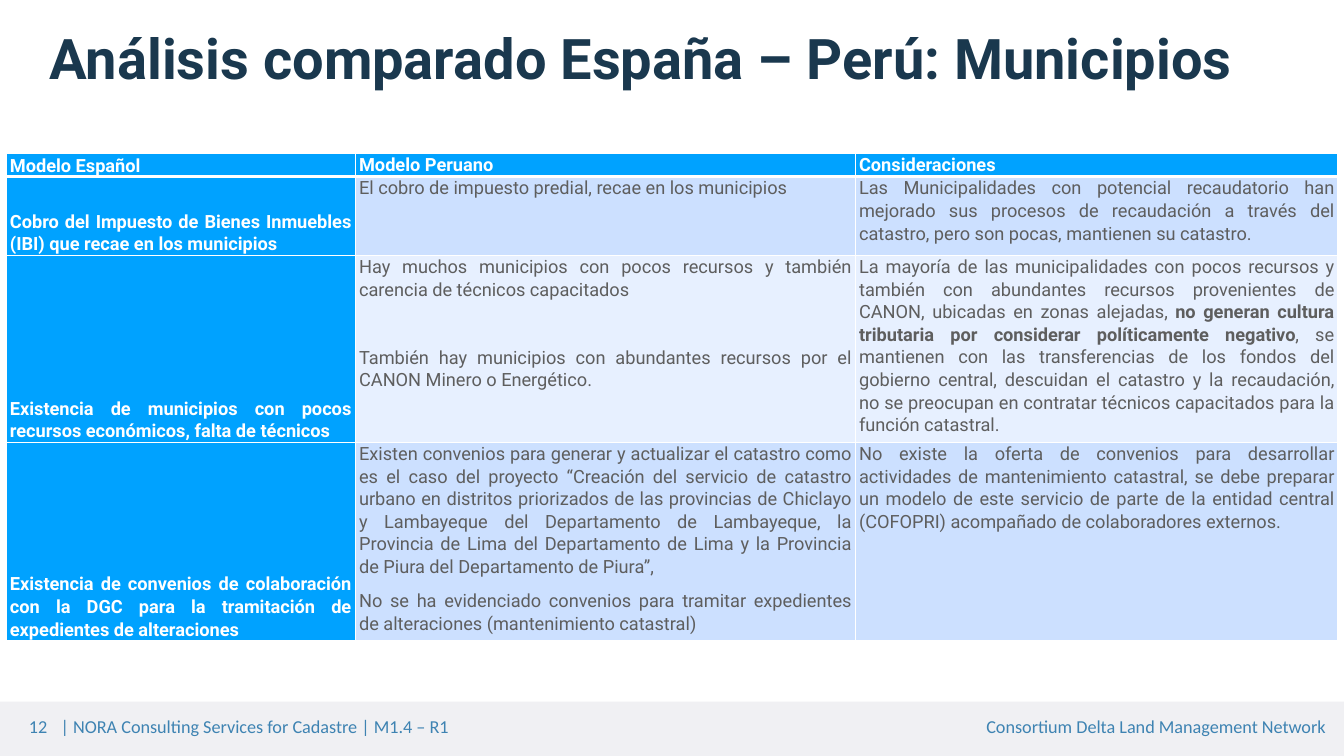
import pptx
import pptx.dml.color
import pptx.enum.shapes
import pptx.enum.text
import pptx.oxml
import pptx.oxml.ns
import pptx.util

Cm = pptx.util.Cm
Pt = pptx.util.Pt
Align = pptx.enum.text.PP_ALIGN
Anchor = pptx.enum.text.MSO_ANCHOR

COLORS = {
    "title": "1A384E",
    "footer band": "F0F0F3",
    "footer text": "3E83B2",
    "header": "00A2FF",
    "odd row": "CCE0FF",
    "even row": "E7F0FF",
    "body text": "5E5E5E",
    "white": "FFFFFF",
}

PAGE_WIDTH, PAGE_HEIGHT = 33.87, 19.05
COLUMN_WIDTHS = [8.8, 12.6, 12.17]
ROW_HEIGHTS = [0.43, 1.98, 4.42, 4.65]
BLANK_LINE = Pt(24.5)

# Each cell is a list of paragraphs; ** switches bold on and off.
MUNICIPALITY_ROWS = [
    [["Modelo Español"], ["Modelo Peruano"], ["Consideraciones"]],
    [
        ["Cobro del Impuesto de Bienes Inmuebles (IBI) que recae en los municipios"],
        ["El cobro de impuesto predial, recae en los municipios"],
        ["Las Municipalidades con potencial recaudatorio han mejorado sus procesos de "
         "recaudación a través del catastro, pero son pocas, mantienen su catastro."],
    ],
    [
        ["Existencia de municipios con pocos recursos económicos, falta de técnicos"],
        ["Hay muchos municipios con pocos recursos y también carencia de técnicos capacitados",
         "También hay municipios con abundantes recursos por el CANON Minero o Energético."],
        ["La mayoría de las municipalidades con pocos recursos y también con abundantes "
         "recursos provenientes de CANON, ubicadas en zonas alejadas, **no generan cultura "
         "tributaria por considerar políticamente negativo**, se mantienen con las "
         "transferencias de los fondos del gobierno central, descuidan el catastro y la "
         "recaudación, no se preocupan en contratar técnicos capacitados para la función "
         "catastral."],
    ],
    [
        ["Existencia de convenios de colaboración con la DGC para la tramitación de "
         "expedientes de alteraciones"],
        ["Existen convenios para generar y actualizar el catastro como es el caso del proyecto "
         "“Creación del servicio de catastro urbano en distritos priorizados de las provincias "
         "de Chiclayo y Lambayeque del Departamento de Lambayeque, la Provincia de Lima del "
         "Departamento de Lima y la Provincia de Piura del Departamento de Piura”,",
         "No se ha evidenciado convenios para tramitar expedientes de alteraciones "
         "(mantenimiento catastral)"],
        ["No existe la oferta de convenios para desarrollar actividades de mantenimiento "
         "catastral, se debe preparar un modelo de este servicio de parte de la entidad "
         "central (COFOPRI) acompañado de colaboradores externos."],
    ],
]


def rgb(name):
    return pptx.dml.color.RGBColor.from_string(COLORS[name])


def style_span(span, font, size, color, bold=False):
    span.font.name = font
    span.font.size = Pt(size)
    span.font.bold = bold
    span.font.color.rgb = rgb(color)


def set_margins(frame, margin):
    frame.margin_left = frame.margin_right = margin
    frame.margin_top = frame.margin_bottom = margin


def add_title(page, left, top, width, height):
    title = page.shapes.title
    title.left, title.top, title.width, title.height = Cm(left), Cm(top), Cm(width), Cm(height)
    frame = title.text_frame
    frame.text = "Análisis comparado España – Perú: Municipios"
    frame.auto_size = pptx.enum.text.MSO_AUTO_SIZE.NONE
    frame.vertical_anchor = Anchor.MIDDLE
    set_margins(frame, Cm(0.08))
    para = frame.paragraphs[0]
    para.alignment = Align.LEFT
    style_span(para.runs[0], "Roboto", 40, "title", True)


def add_footer(page, left, top, width, height):
    band = page.shapes.add_shape(pptx.enum.shapes.MSO_SHAPE.RECTANGLE,
                                 Cm(left), Cm(top), Cm(width), Cm(height))
    band.shadow.inherit = False
    band.fill.solid()
    band.fill.fore_color.rgb = rgb("footer band")
    band.line.fill.background()

    labels = [
        ("12", 0.25, 1.42, Align.CENTER),
        ("| NORA Consulting Services for Cadastre | M1.4 – R1", 1.45, 15.14, Align.LEFT),
        ("Consortium Delta Land Management Network", 18.34, 15.14, Align.RIGHT),
    ]
    for text, offset, label_width, alignment in labels:
        box = page.shapes.add_textbox(Cm(left + offset), Cm(top + 0.28),
                                      Cm(label_width), Cm(0.69))
        frame = box.text_frame
        frame.text = text
        frame.word_wrap = True
        frame.vertical_anchor = Anchor.MIDDLE
        set_margins(frame, Cm(0.08))
        para = frame.paragraphs[0]
        para.alignment = alignment
        style_span(para.runs[0], "Calibri", 13, "footer text")


def set_borders(cell, row):
    """Draw white cell borders, thick between the header and the first row."""
    widths = {"L": 1, "R": 1, "T": 3 if row == 1 else 1, "B": 3 if row == 0 else 1}
    properties = cell._tc.get_or_add_tcPr()
    for position, (side, width) in enumerate(widths.items()):
        properties.insert(position, pptx.oxml.parse_xml(
            f'<a:ln{side} {pptx.oxml.ns.nsdecls("a")} w="{Pt(width)}">'
            f'<a:solidFill><a:srgbClr val="{COLORS["white"]}"/></a:solidFill></a:ln{side}>'))


def fill_cell(cell, texts, row, column):
    is_heading = row == 0 or column == 0
    cell.fill.solid()
    cell.fill.fore_color.rgb = rgb(
        "header" if is_heading else "odd row" if row % 2 else "even row")
    cell.margin_left = cell.margin_right = Cm(0.1)
    cell.margin_top = cell.margin_bottom = 0
    cell.vertical_anchor = Anchor.BOTTOM if column == 0 else Anchor.TOP
    set_borders(cell, row)

    frame = cell.text_frame
    for index, text in enumerate(texts):
        para = frame.add_paragraph() if index else frame.paragraphs[0]
        para.alignment = Align.JUSTIFY
        para.line_spacing = 1.07
        para.space_after = Pt(8)
        if index and row == 2:
            para.space_before = BLANK_LINE
        for part, piece in enumerate(text.split("**")):
            span = para.add_run()
            span.text = piece
            style_span(span, "Roboto", 13, "white" if is_heading else "body text",
                       is_heading or part % 2 == 1)


def add_comparison_table(page, left, top):
    table = page.shapes.add_table(len(ROW_HEIGHTS), len(COLUMN_WIDTHS), Cm(left), Cm(top),
                                  Cm(sum(COLUMN_WIDTHS)), Cm(sum(ROW_HEIGHTS))).table
    for column, width in zip(table.columns, COLUMN_WIDTHS):
        column.width = Cm(width)
    for row, height in zip(table.rows, ROW_HEIGHTS):
        row.height = Cm(height)
    for row, cells in enumerate(MUNICIPALITY_ROWS):
        for column, texts in enumerate(cells):
            fill_cell(table.cell(row, column), texts, row, column)


def main():
    deck = pptx.Presentation()
    deck.slide_width, deck.slide_height = Cm(PAGE_WIDTH), Cm(PAGE_HEIGHT)
    page = deck.slides.add_slide(deck.slide_layouts[5])
    add_footer(page, 0, 17.68, PAGE_WIDTH, PAGE_HEIGHT - 17.68)
    add_title(page, 1.17, 0.51, 32.18, 1.85)
    add_comparison_table(page, 0.15, 3.86)
    deck.save("out.pptx")


if __name__ == "__main__":
    main()
